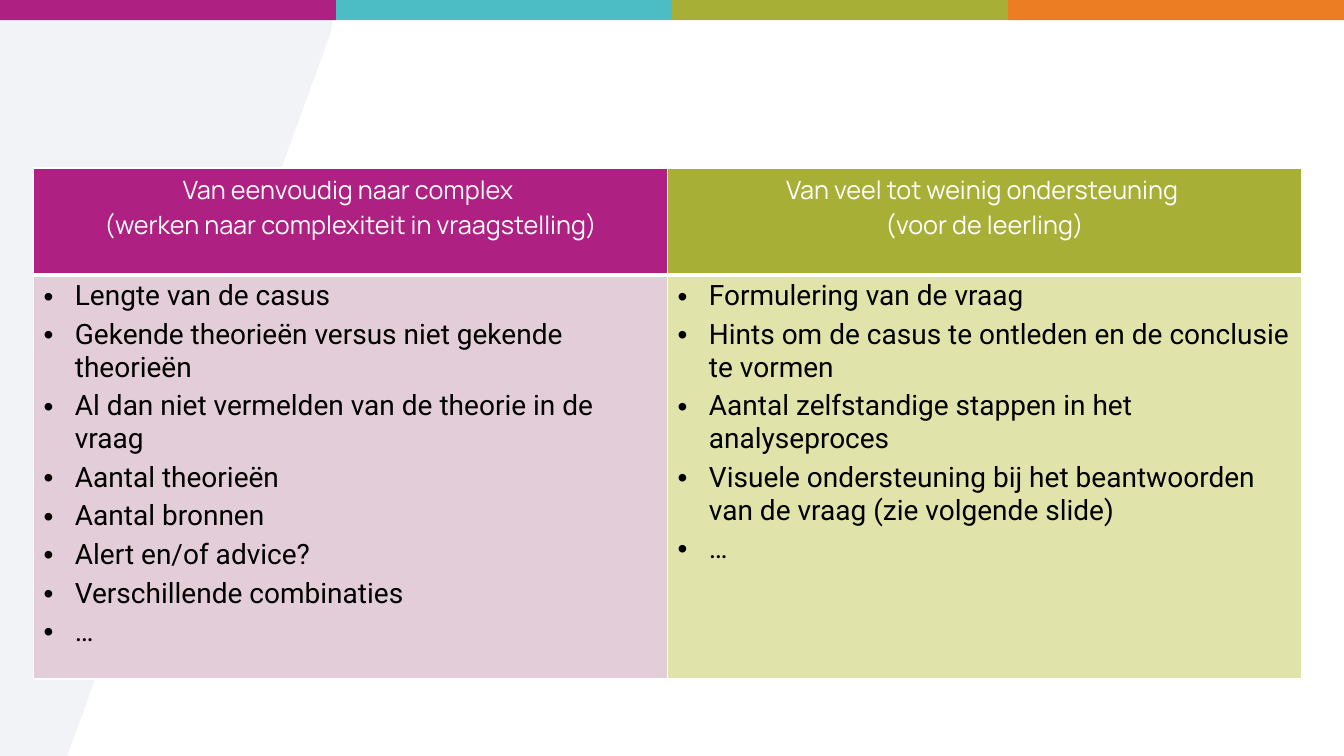
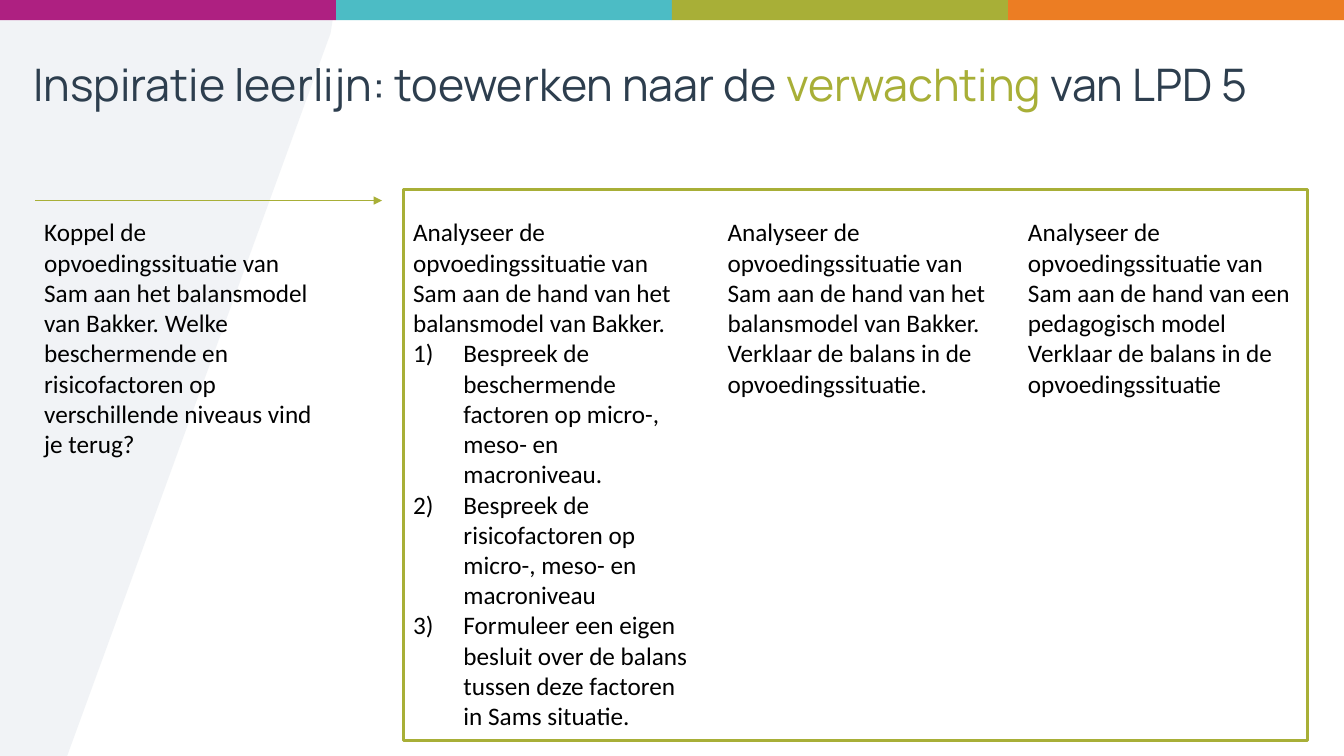
from dataclasses import dataclass

from lxml.etree import SubElement
from pptx import Presentation
from pptx.dml.color import RGBColor
from pptx.enum.shapes import MSO_CONNECTOR, MSO_SHAPE
from pptx.enum.text import MSO_ANCHOR, MSO_AUTO_SIZE, PP_ALIGN
from pptx.oxml.ns import qn
from pptx.util import Inches, Pt

W, H = Inches(13.33), Inches(7.5)
COLS, ROWS = 40, 36

PURPLE, TEAL, OLIVE, ORANGE = "AE2081", "4CBCC5", "A8AF37", "EC7D23"
PINK, LIME, MIST = "E3CDD8", "E1E4AA", "E8ECF0"
NAVY, BLACK, WHITE = "2D3E4E", "000000", "FFFFFF"
HEAD_FONT, LIST_FONT, BODY_FONT = "Manrope", "Roboto", "Calibri"
BAND_ROWS = 0.96


@dataclass(frozen=True)
class Box:
    """Left, top, width and height in grid columns and rows."""
    col: float
    row: float
    cols: float
    rows: float

    def emu(self) -> tuple[int, int, int, int]:
        return x(self.col), y(self.row), x(self.cols), y(self.rows)


@dataclass(frozen=True)
class TableColumn:
    heading: str
    items: tuple[str, ...]
    head_fill: str
    body_fill: str


@dataclass(frozen=True)
class Task:
    box: Box
    paragraphs: tuple[str, ...]
    steps: tuple[str, ...] = ()


def x(cols: float) -> int:
    return round(W * cols / COLS)


def y(rows: float) -> int:
    return round(H * rows / ROWS)


def rgb(color: str) -> RGBColor:
    return RGBColor.from_string(color)


def style(font, name: str, size: float, color: str) -> None:
    font.name, font.size, font.bold = name, Pt(size), False
    font.color.rgb = rgb(color)


def paint(shape, color: str) -> None:
    shape.shadow.inherit = False
    shape.fill.solid()
    shape.fill.fore_color.rgb = rgb(color)
    shape.line.fill.background()


def hang(p, indent: float, tag: str, **attrs: str) -> None:
    """Give a paragraph a hanging indent and a bullet or number."""
    pPr = p._p.get_or_add_pPr()
    pPr.set("marL", str(Inches(indent)))
    pPr.set("indent", str(-Inches(indent)))
    if tag == "a:buChar":
        SubElement(pPr, qn("a:buFont"), typeface="Arial")
    SubElement(pPr, qn(tag), **attrs)


def add_backdrop(s) -> None:
    top, corner = y(0.24), x(9.9)
    builder = s.shapes.build_freeform(0, top)
    builder.add_line_segments(
        [(x(9.75), top), (corner, y(BAND_ROWS)), (x(9.84), y(1.58)),
         (x(2), H), (0, H)])
    panel = builder.convert_to_shape()
    paint(panel, MIST)
    color = panel.fill._xPr.find(qn("a:solidFill"))[0]
    SubElement(color, qn("a:alpha"), val="59000")

    colors = (PURPLE, TEAL, OLIVE, ORANGE)
    step = COLS / len(colors)
    for i, color in enumerate(colors):
        box = Box(i * step, 0, step, BAND_ROWS)
        paint(s.shapes.add_shape(MSO_SHAPE.RECTANGLE, *box.emu()), color)


def add_title(s, parts: tuple[tuple[str, str], ...]) -> None:
    box = Box(0.69, BAND_ROWS, 38.16, 6)
    tf = s.shapes.add_textbox(*box.emu()).text_frame
    tf.word_wrap = True
    tf.vertical_anchor = MSO_ANCHOR.MIDDLE
    for text, color in parts:
        r = tf.paragraphs[0].add_run()
        r.text = text
        style(r.font, HEAD_FONT, 32, color)


def set_borders(cell, bottom: float) -> None:
    tcPr = cell._tc.get_or_add_tcPr()
    for side, width in (("L", 1), ("R", 1), ("T", 1), ("B", bottom)):
        ln = SubElement(tcPr, qn(f"a:ln{side}"), w=str(Pt(width)))
        SubElement(SubElement(ln, qn("a:solidFill")), qn("a:srgbClr"), val=WHITE)


def fill_cell(cell, color: str, bottom: float = 1) -> None:
    set_borders(cell, bottom)
    cell.fill.solid()
    cell.fill.fore_color.rgb = rgb(color)


def add_table(s, columns: tuple[TableColumn, ...]) -> None:
    heights = (5.09, 19.25)
    box = Box(1, 8, 37.74, sum(heights))
    table = s.shapes.add_table(len(heights), len(columns), *box.emu()).table
    table.horz_banding = False
    for row, height in zip(table.rows, heights):
        row.height = y(height)
    for i, column in enumerate(columns):
        head, body = table.cell(0, i), table.cell(1, i)
        fill_cell(head, column.head_fill, bottom=3)
        head.text_frame.text = column.heading
        p = head.text_frame.paragraphs[0]
        p.alignment = PP_ALIGN.CENTER
        for r in p.runs:
            style(r.font, HEAD_FONT, 18, WHITE)

        fill_cell(body, column.body_fill)
        body.text_frame.text = "\n".join(column.items)
        for n, p in enumerate(body.text_frame.paragraphs):
            if n:
                p.space_before = Pt(4)
            hang(p, 0.31, "a:buChar", char="•")
            style(p.runs[0].font, LIST_FONT, 20, BLACK)


def add_task(s, task: Task) -> None:
    tf = s.shapes.add_textbox(*task.box.emu()).text_frame
    tf.word_wrap = True
    tf.auto_size = MSO_AUTO_SIZE.SHAPE_TO_FIT_TEXT
    tf.text = "\n".join(task.paragraphs + task.steps)
    for n, p in enumerate(tf.paragraphs):
        if n >= len(task.paragraphs):
            hang(p, 0.5, "a:buAutoNum", type="arabicParenR")
        style(p.runs[0].font, BODY_FONT, 18, BLACK)


def add_frame(s, box: Box) -> None:
    frame = s.shapes.add_shape(MSO_SHAPE.RECTANGLE, *box.emu())
    frame.shadow.inherit = False
    frame.fill.background()
    frame.line.color.rgb = rgb(OLIVE)
    frame.line.width = Pt(2)


def add_arrow(s, start: float, end: float, row: float) -> None:
    arrow = s.shapes.add_connector(
        MSO_CONNECTOR.STRAIGHT, x(start), y(row), x(end), y(row))
    arrow.line.color.rgb = rgb(OLIVE)
    arrow.line.width = Pt(0.75)
    SubElement(arrow.line._get_or_add_ln(), qn("a:tailEnd"), type="triangle")
    SubElement(arrow._element.spPr, qn("a:effectLst"))


def add_slide(prs):
    s = prs.slides.add_slide(prs.slide_layouts[6])
    add_backdrop(s)
    return s


TABLE = (
    TableColumn(
        "Van eenvoudig naar complex \v(werken naar complexiteit in vraagstelling)",
        ("Lengte van de casus",
         "Gekende theorieën versus niet gekende theorieën",
         "Al dan niet vermelden van de theorie in de vraag",
         "Aantal theorieën",
         "Aantal bronnen",
         "Alert en/of advice?",
         "Verschillende combinaties",
         "…"),
        PURPLE, PINK),
    TableColumn(
        "Van veel tot weinig ondersteuning \v(voor de leerling)",
        ("Formulering van de vraag",
         "Hints om de casus te ontleden en de conclusie te vormen",
         "Aantal zelfstandige stappen in het analyseproces",
         "Visuele ondersteuning bij het beantwoorden van de vraag "
         "(zie volgende slide)",
         "…"),
        OLIVE, LIME),
)

TITLE = (("Inspiratie leerlijn: toewerken naar de ", NAVY),
         ("verwachting", OLIVE),
         (" van LPD 5", NAVY))

TASK_ROW, TASK_COLS = 10.08, 9
ANALYSE = "Analyseer de opvoedingssituatie van Sam aan de hand van "
BAKKER = ANALYSE + "het balansmodel van Bakker."
EXPLAIN = "Verklaar de balans in de opvoedingssituatie"

TASKS = (
    Task(Box(1.02, TASK_ROW, TASK_COLS, 12.1),
         ("Koppel de opvoedingssituatie van Sam aan het balansmodel van Bakker. "
          "Welke beschermende en risicofactoren op verschillende niveaus "
          "vind je terug?",)),
    Task(Box(12, TASK_ROW, TASK_COLS, 25.2),
         (BAKKER,),
         ("Bespreek de beschermende factoren op micro-, meso- en macroniveau.",
          "Bespreek de risicofactoren op micro-, meso- en macroniveau",
          "Formuleer een eigen besluit over de balans tussen deze factoren "
          "in Sams situatie.")),
    Task(Box(21.36, TASK_ROW, TASK_COLS, 9.2), (BAKKER, EXPLAIN + ".")),
    Task(Box(30.3, TASK_ROW, TASK_COLS, 9.2),
         (ANALYSE + "een pedagogisch model", EXPLAIN)),
)


def main() -> None:
    prs = Presentation()
    prs.slide_width, prs.slide_height = W, H

    add_table(add_slide(prs), TABLE)

    s = add_slide(prs)
    add_title(s, TITLE)
    for task in TASKS:
        add_task(s, task)
    add_frame(s, Box(12, 9.03, 26.91, 26.25))
    add_arrow(s, 1.05, 11.37, 9.55)

    prs.save("out.pptx")


if __name__ == "__main__":
    main()
